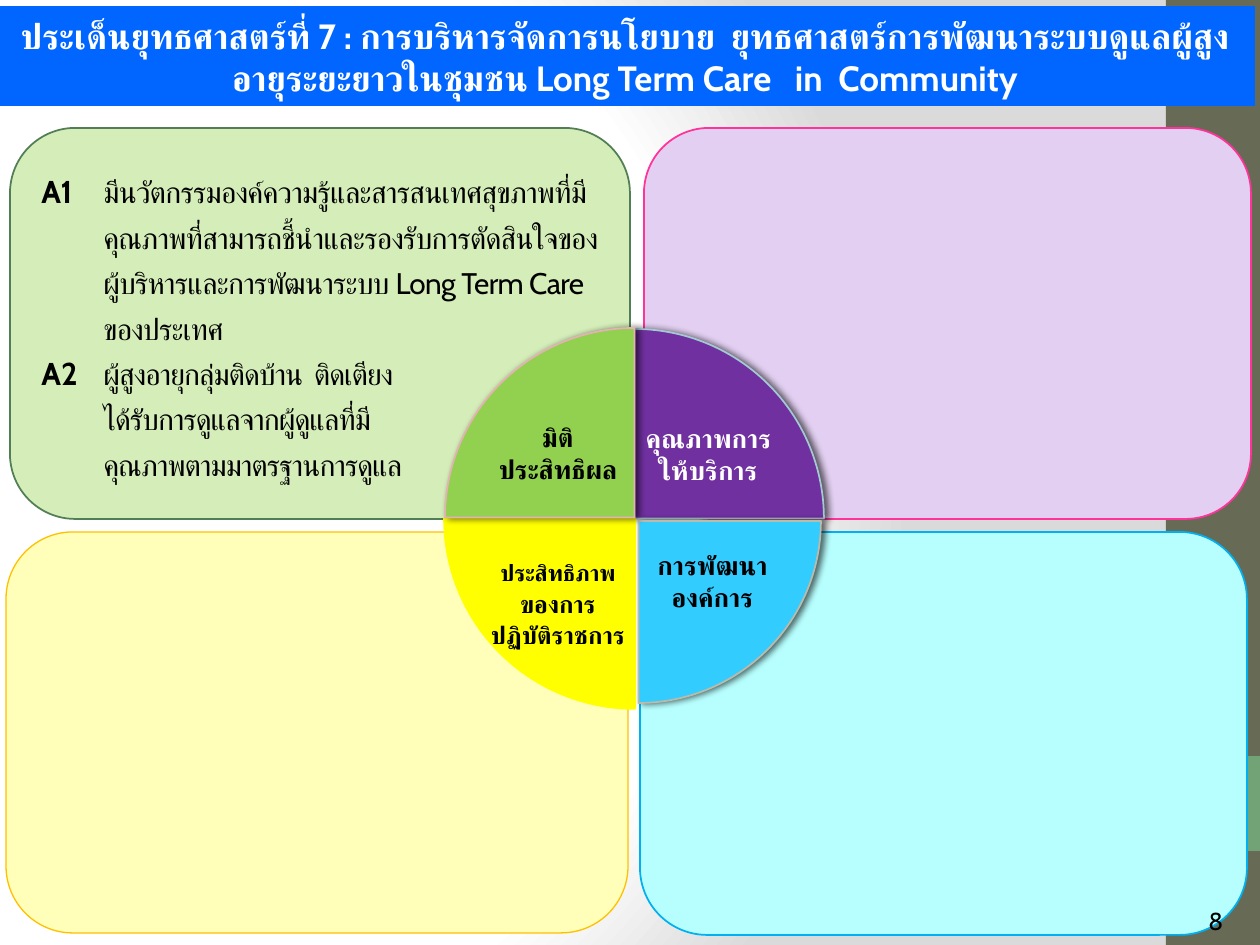
from pptx import Presentation
from pptx.dml.color import RGBColor as RGB
from pptx.enum.lang import MSO_LANGUAGE_ID as Lang
from pptx.enum.shapes import MSO_SHAPE as Shape
from pptx.enum.text import MSO_ANCHOR as Anchor, MSO_AUTO_SIZE as Auto, PP_ALIGN as Align
from pptx.oxml import parse_xml
from pptx.oxml.ns import nsdecls, qn
from pptx.util import Pt

PX = 914400 / 126
FONT = "Cabin"
BLACK, WHITE = RGB(0, 0, 0), RGB(255, 255, 255)
OLIVE, SAGE = RGB(0x67, 0x6A, 0x55), RGB(0x72, 0xA3, 0x76)
BLUE, CYAN, SKY = RGB(0, 0x66, 0xFF), RGB(0xB7, 0xFF, 0xFF), RGB(0, 0xB0, 0xF0)
LILAC, PINK = RGB(0xE2, 0xCF, 0xF1), RGB(0xFF, 0x33, 0x99)
MINT, GREEN = RGB(0xD4, 0xED, 0xB9), RGB(0x52, 0x7E, 0x56)
CREAM, GOLD = RGB(0xFF, 0xFF, 0xB9), RGB(0xFF, 0xC0, 0)
PURPLE, ICE = RGB(0x70, 0x30, 0xA0), RGB(0xA3, 0xC9, 0xD3)
AZURE, GREY = RGB(0x33, 0xCC, 0xFF), RGB(0xBC, 0xBA, 0xAB)
YELLOW, LIME, ROSE = RGB(255, 255, 0), RGB(0x92, 0xD0, 0x50), RGB(0xE4, 0xB2, 0xB2)

TITLE = ("ประเด็นยุทธศาสตร์ที่ 7 : การบริหารจัดการนโยบาย  ยุทธศาสตร์การพัฒนาระบบดูแลผู้สูงอายุระยะยาวในชุมชน "
         "Long Term Care   in  Community")
BANDS = [((1166, 0, 94, 945), OLIVE), ((1166, 756, 94, 95), SAGE)]
PANELS = [
    ((640, 532, 607, 403), CYAN, SKY, 1),
    ((644, 128, 607, 391), LILAC, PINK, 1),
    ((6, 532, 622, 401), CREAM, GOLD, 0.75),
    ((10, 128, 620, 391), MINT, GREEN, 1),
]
GOALS = [
    ("A1", "มีนวัตกรรมองค์ความรู้และสารสนเทศสุขภาพที่มีคุณภาพที่สามารถชี้นำและรองรับการตัดสินใจของ"
     "ผู้บริหารและการพัฒนาระบบ Long Term Care ของประเทศ", -40),
    ("A2", "ผู้สูงอายุกลุ่มติดบ้าน  ติดเตียง", -50),
    ("", "ได้รับการดูแลจากผู้ดูแลที่มี", -50),
    ("", "คุณภาพตามมาตรฐานการดูแล", -50),
]
WHEEL = [
    ((445, 329, 379, 379), 162, PURPLE, ICE, 1, True,
     (638, 398, 140, 112), [("คุณภาพการให้บริการ", 15)], WHITE, 0),
    ((456, 339, 365, 364), 0, AZURE, GREY, 1, True,
     (645, 527, 135, 108), [("การพัฒนาองค์การ", 15)], BLACK, 0),
    ((445, 329, 379, 379), 54, YELLOW, YELLOW, 2, False,
     (488, 524, 140, 112), [("ประสิทธิภาพ", 13), ("ของการปฏิบัติราชการ", 14)], BLACK, 31),
    ((445, 328, 379, 379), 108, LIME, ROSE, 1, True,
     (488, 397, 140, 112), [("มิติประสิทธิผล", 15)], BLACK, 0),
]


def emu(box):
    return [round(n * PX) for n in box]


def paint(shape, fill, line=None, width=1):
    shape.fill.solid()
    shape.fill.fore_color.rgb = fill
    if line is None:
        shape.line.fill.background()
    else:
        shape.line.color.rgb = line
        shape.line.width = Pt(width)


def draw(shapes, kind, box, *look):
    shape = shapes.add_shape(kind, *emu(box))
    shape.shadow.inherit = False
    paint(shape, *look)
    return shape


def style(font, size=None, color=None, bold=None):
    font.name = FONT
    font.language_id = Lang.THAI
    if size:
        font.size = Pt(size)
    if color is not None:
        font.color.rgb = color
    font.bold = bold


def add_run(para, text, *look):
    run = para.add_run()
    run.text = text
    style(run.font, *look)
    props = run.font._element if hasattr(run.font, "_element") else run._r.get_or_add_rPr()
    props.append(parse_xml(f'<a:cs {nsdecls("a")} typeface="{FONT}"/>'))
    return props


def set_frame(frame, anchor=Anchor.MIDDLE, pad=None):
    frame.word_wrap = True
    frame.auto_size = Auto.NONE
    frame.vertical_anchor = anchor
    if pad is not None:
        frame.margin_left = frame.margin_right = frame.margin_top = frame.margin_bottom = round(pad * PX)


def add_shadow(shape):
    effects = shape._element.spPr.find(qn("a:effectLst"))
    effects.append(parse_xml(
        f'<a:outerShdw {nsdecls("a")} blurRad="{Pt(4)}" dist="{Pt(2)}" dir="0" rotWithShape="0">'
        '<a:srgbClr val="000000"><a:alpha val="60000"/></a:srgbClr></a:outerShdw>'))


def add_back(slide):
    slide.background.fill.solid()
    back = slide.element.find(".//" + qn("p:bgPr"))
    stops = "".join(f'<a:gs pos="{pos}000"><a:srgbClr val="{color}"/></a:gs>'
                    for pos, color in ((0, WHITE), (75, WHITE), (100, "DADADA")))
    back.replace(back[0], parse_xml(
        f'<a:gradFill {nsdecls("a")} rotWithShape="1"><a:gsLst>{stops}</a:gsLst><a:path path="circle">'
        '<a:fillToRect l="20000" t="50000" r="100000" b="50000"/></a:path></a:gradFill>'))


def add_title(slide):
    title = slide.shapes.title
    title.left, title.top, title.width, title.height = emu((-5, 6, 1260, 100))
    title._element.spPr.append(parse_xml(
        f'<a:prstGeom {nsdecls("a")} prst="roundRect"><a:avLst>'
        '<a:gd name="adj" fmla="val 5700"/></a:avLst></a:prstGeom>'))
    paint(title, BLUE)
    set_frame(title.text_frame, pad=0)
    para = title.text_frame.paragraphs[0]
    para.alignment = Align.CENTER
    add_run(para, TITLE, 20, WHITE, True)


def add_goals(frame):
    set_frame(frame)
    for i, (code, text, gap) in enumerate(GOALS):
        para = frame.add_paragraph() if i else frame.paragraphs[0]
        para.alignment = Align.LEFT
        para.line_spacing = Pt(26)
        props = para._p.get_or_add_pPr()
        props.set("marL", str(round(62 * PX)))
        props.set("indent", str(round(-62 * PX)))
        add_run(para, code + "\t", 18, BLACK, True)
        add_run(para, text, 17, BLACK, False).set("spc", str(gap))


def add_slice(shapes, box, start, fill, line, width, shade, spot, parts, color, drop):
    pie = draw(shapes, Shape.PIE, box, fill, line, width)
    pie.adjustments[0], pie.adjustments[1] = start, (start + 54) % 216
    if shade:
        add_shadow(pie)
    frame = shapes.add_textbox(*emu(spot)).text_frame
    set_frame(frame, Anchor.TOP if drop else Anchor.MIDDLE, 3)
    if drop:
        frame.margin_top = round(drop * PX)
    para = frame.paragraphs[0]
    para.alignment = Align.CENTER
    para.line_spacing = Pt(18)
    for text, size in parts:
        add_run(para, text, size, color, True)


def main():
    deck = Presentation()
    deck.slide_width, deck.slide_height = emu((1260, 945))
    slide = deck.slides.add_slide(deck.slide_layouts[5])
    shapes = slide.shapes
    add_back(slide)
    add_title(slide)
    for box, fill in BANDS:
        band = draw(shapes, Shape.RECTANGLE, box, fill)
        shapes._spTree.remove(band._element)
        shapes.title._element.addprevious(band._element)
    for box, *look in PANELS:
        panel = draw(shapes, Shape.ROUNDED_RECTANGLE, box, *look)
    add_goals(panel.text_frame)
    wheel = shapes.add_group_shape()
    for part in WHEEL:
        add_slice(wheel.shapes, *part)
    frame = shapes.add_textbox(*emu((1196, 900, 64, 43))).text_frame
    frame.word_wrap = True
    add_run(frame.paragraphs[0], "8", 14, BLACK)
    deck.save("out.pptx")


if __name__ == "__main__":
    main()
